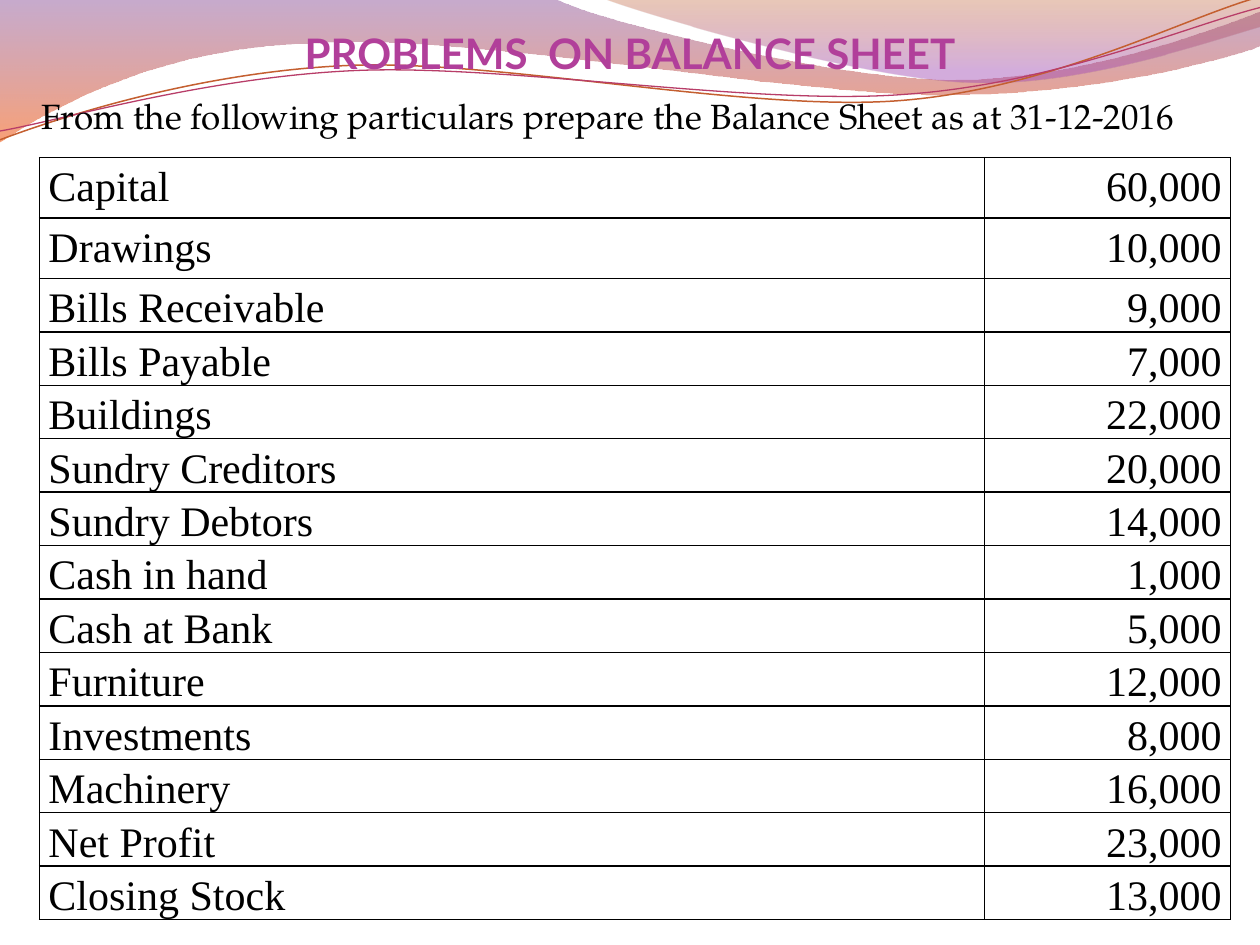
from dataclasses import dataclass

from lxml import etree
from pptx import Presentation
from pptx import util as u
from pptx.dml.color import RGBColor
from pptx.enum import text
from pptx.oxml import ns

TITLE = "PROBLEMS  ON BALANCE SHEET"
TASK = "From the following particulars prepare the Balance Sheet as at 31-12-2016"
ITEMS = [
    ("Capital", "60,000"),
    ("Drawings", "10,000"),
    ("Bills Receivable", "9,000"),
    ("Bills Payable", "7,000"),
    ("Buildings", "22,000"),
    ("Sundry Creditors", "20,000"),
    ("Sundry Debtors", "14,000"),
    ("Cash in hand", "1,000"),
    ("Cash at Bank", "5,000"),
    ("Furniture", "12,000"),
    ("Investments", "8,000"),
    ("Machinery", "16,000"),
    ("Net Profit", "23,000"),
    ("Closing Stock", "13,000"),
]

# Points in inches: a pair is a straight step, six numbers are a Bezier curve.
# Gradient stops: position, colour, opacity in percent.
BANDS = [
    ([(0, 0), (4.4, -0.01), (4.76, 0.17, 6.64, 0.63, 7.58, 0.63),
      (8.53, 0.63, 9.58, 0.26, 10, 0.09), (10.01, 0.36),
      (9.83, 0.44, 8.7, 0.76, 7.46, 0.75), (6.22, 0.75, 3.82, 0.28, 2.57, 0.34),
      (1.29, 0.36, 0.46, 0.83, -0.01, 1.13), (0, 0)],
     [(0, "834591", 45), (1, "F35307", 55)]),
    ([(4.79, -0.01), (5.09, 0.11, 6.82, 0.62, 7.69, 0.65),
      (8.56, 0.69, 9.61, 0.32, 10, 0.21), (10, 0), (4.79, -0.01)],
     [(0, "B74915", 30), (0.8, "A14BB4", 45)]),
]
WAVES = [
    ([(0, 1.11), (0.48, 0.93, 1.58, 0.57, 2.77, 0.52),
      (3.95, 0.47, 5.93, 0.89, 7.13, 0.8), (8.33, 0.71, 9.38, 0.15, 9.98, -0.02)],
     "C45F30", 0.85),
    ([(0, 1.04), (0.47, 0.96, 1.64, 0.61, 2.83, 0.56),
      (4.03, 0.51, 5.97, 0.84, 7.17, 0.75), (8.36, 0.67, 9.41, 0.21, 10, 0.06)],
     "B83D68", 0.75),
]


@dataclass(frozen=True)
class Theme:
    head: tuple = ("Lato", 24, "B13F9A", True)
    body: tuple = ("TeX Gyre Pagella", 20, "000000", False)
    cell: tuple = ("Times New Roman", 24, "000000", False)
    rule: str = "000000"


THEME = Theme()


def inch(val):
    return u.Cm(val * 2.54)


def sub(node, tag, **attrs):
    return etree.SubElement(node, ns.qn(tag), attrs)


def write(para, words, style):
    run = para.add_run()
    run.text = words
    font = run.font
    font.name, font.bold = style[0], style[3]
    font.size = u.Pt(style[1])
    font.color.rgb = RGBColor.from_string(style[2])


def place(shape, *box):
    shape.left, shape.top, shape.width, shape.height = map(inch, box)


def draw(slide, steps, close):
    """Build an outline through all points, then bend its six-number steps."""
    pts = [(inch(s[i]), inch(s[i + 1])) for s in steps for i in range(0, len(s), 2)]
    pen = slide.shapes.build_freeform(*pts[0])
    pen.add_line_segments(pts[1:], close=close)
    shape = pen.convert_to_shape()
    shape.shadow.inherit = False
    lines = iter(list(shape._element.spPr.iter(ns.qn("a:lnTo"))))
    for step in steps[1:]:
        line = next(lines)
        if len(step) == 6:
            curve = etree.Element(ns.qn("a:cubicBezTo"))
            line.addprevious(curve)
            for part in (line, next(lines), next(lines)):
                curve.append(part[0])
                part.getparent().remove(part)
    return shape


def add_band(slide, steps, stops):
    shape = draw(slide, steps, True)
    shape.line.fill.background()
    shape.fill.gradient()
    shape.fill.gradient_angle = 270
    for stop, (pos, tint, alpha) in zip(shape.fill.gradient_stops, stops):
        stop.position = pos
        stop.color.rgb = RGBColor.from_string(tint)
    marks = shape._element.spPr.iter(ns.qn("a:srgbClr"))
    for mark, (pos, tint, alpha) in zip(marks, stops):
        sub(mark, "a:alpha", val=str(alpha * 1000))


def add_wave(slide, steps, tint, width):
    shape = draw(slide, steps, False)
    shape.fill.background()
    shape.line.color.rgb = RGBColor.from_string(tint)
    shape.line.width = u.Pt(width)


def add_text(slide):
    head, body = slide.shapes.title, slide.placeholders[1]
    for shape in (head, body):
        slide.shapes._spTree.append(shape._element)  # in front of the waves
        shape.text_frame.auto_size = text.MSO_AUTO_SIZE.NONE
    place(head, 0.5, 0, 9, 0.62)
    frame = head.text_frame
    frame.vertical_anchor = text.MSO_ANCHOR.BOTTOM
    frame.margin_left = frame.margin_right = frame.margin_bottom = 0
    frame.paragraphs[0].alignment = text.PP_ALIGN.CENTER
    write(frame.paragraphs[0], TITLE, THEME.head)

    place(body, 0.23, 0.7, 9.27, 6.21)
    para = body.text_frame.paragraphs[0]
    para.space_before = u.Pt(4)
    props = para._p.get_or_add_pPr()
    props.set("marL", str(inch(0.3)))
    props.set("indent", str(inch(-0.3)))
    sub(props, "a:buNone")
    write(para, TASK, THEME.body)


def frame_cell(cell):
    props = cell._tc.get_or_add_tcPr()
    for side in ("a:lnL", "a:lnR", "a:lnT", "a:lnB"):
        line = sub(props, side, w=str(u.Pt(1)))
        sub(sub(line, "a:solidFill"), "a:srgbClr", val=THEME.rule)
    cell.fill.background()


def add_items(slide):
    wide, tall = (7.5, 1.95), [0.48] * 2 + [0.41] * (len(ITEMS) - 2)
    box = u.Cm(0.8), *map(inch, (1.25, sum(wide), sum(tall)))
    table = slide.shapes.add_table(len(ITEMS), len(wide), *box).table
    table.first_row = table.horz_banding = False
    for col, size in zip(table.columns, wide):
        col.width = inch(size)
    aligns = (text.PP_ALIGN.JUSTIFY, text.PP_ALIGN.RIGHT)
    for row, size, item in zip(table.rows, tall, ITEMS):
        row.height = inch(size)
        for cell, words, align in zip(row.cells, item, aligns):
            frame_cell(cell)
            cell.margin_left = cell.margin_right = inch(0.07)
            cell.margin_top = cell.margin_bottom = 0
            para = cell.text_frame.paragraphs[0]
            para.alignment, para.line_spacing = align, 1.15
            write(para, words, THEME.cell)


def main():
    deck = Presentation()
    deck.slide_width, deck.slide_height = u.Cm(25.4), u.Cm(19.05)
    slide = deck.slides.add_slide(deck.slide_layouts[1])
    for band in BANDS:
        add_band(slide, *band)
    for wave in WAVES:
        add_wave(slide, *wave)
    add_text(slide)
    add_items(slide)
    deck.save("out.pptx")


if __name__ == "__main__":
    main()
